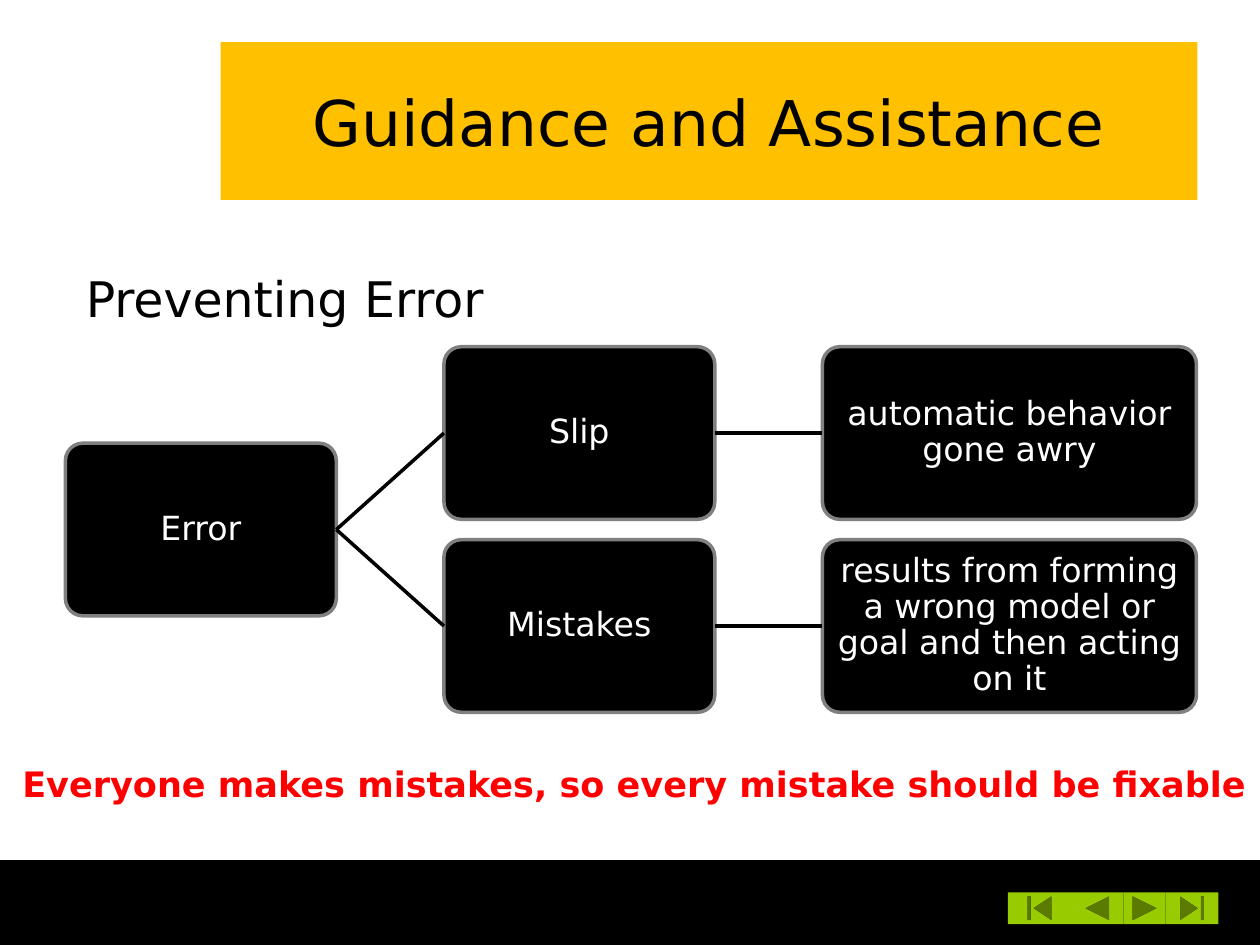
from lxml.etree import SubElement
from pptx import Presentation
from pptx.dml.color import RGBColor
from pptx.enum.shapes import MSO_CONNECTOR, MSO_SHAPE as Shape
from pptx.enum.text import MSO_ANCHOR as Anchor, PP_ALIGN as Align
from pptx.oxml.ns import qn
from pptx.util import Cm, Pt

# Content
TITLE = "Guidance and Assistance"
SUBTITLE = "Preventing Error"
MOTTO = "Everyone makes mistakes, so every mistake should be fixable"
ROOT = "Error"
BRANCHES = [
    ("Slip", "automatic behavior gone awry"),
    ("Mistakes", "results from forming a wrong model or goal and then acting on it"),
]
NAV_BUTTONS = [
    (Shape.ACTION_BUTTON_BEGINNING, 1.27),
    (Shape.ACTION_BUTTON_BACK_OR_PREVIOUS, 1.06),
    (Shape.ACTION_BUTTON_FORWARD_OR_NEXT, 0.85),
    (Shape.ACTION_BUTTON_END, 1.06),
]
FONT = "DejaVu Sans"
COLORS = {"black": "000000", "white": "FFFFFF", "gold": "FFC000",
          "grey": "808080", "green": "99CC00", "red": "FF0000"}

# Tree geometry in cm
TREE_LEFT, TREE_TOP = 1.32, 6.99
WIDTHS = [5.46, 5.46, 7.54]
BOX_HEIGHT, COLUMN_GAP, ROW_STEP = 3.48, 2.17, 3.89
COLUMNS = [TREE_LEFT + sum(WIDTHS[:i]) + i * COLUMN_GAP for i in range(3)]


def color(name):
    return RGBColor.from_string(COLORS[name])


def write(shape, text, size, ink="black", bold=False, align=Align.LEFT,
          anchor=Anchor.TOP, wrap=True, inset=None, spacing=None):
    frame = shape.text_frame
    frame.word_wrap = wrap
    frame.vertical_anchor = anchor
    if inset is not None:
        frame.margin_left = frame.margin_right = Cm(inset)
        frame.margin_top = frame.margin_bottom = Cm(inset)
    paragraph = frame.paragraphs[0]
    paragraph.alignment = align
    paragraph.line_spacing = spacing
    run = paragraph.add_run()
    run.text = text
    run.font.name, run.font.size, run.font.bold = FONT, Pt(size), bold
    run.font.color.rgb = color(ink)


def add_block(slide, kind, left, top, width, height, fill, line=None, weight=2):
    block = slide.shapes.add_shape(kind, Cm(left), Cm(top), Cm(width), Cm(height))
    block.shadow.inherit = False
    block.fill.solid()
    block.fill.fore_color.rgb = color(fill)
    if line:
        block.line.color.rgb = color(line)
        block.line.width = Pt(weight)
    else:
        block.line.fill.background()
    return block


def add_node(slide, text, column, row):
    node = add_block(slide, Shape.ROUNDED_RECTANGLE, COLUMNS[column],
                     TREE_TOP + row * ROW_STEP, WIDTHS[column], BOX_HEIGHT,
                     "black", "grey")
    node.adjustments[0] = 0.1
    write(node, text, 19, "white", align=Align.CENTER, anchor=Anchor.MIDDLE,
          inset=0.13, spacing=0.9)
    return node


def join(slide, start, end):
    link = slide.shapes.add_connector(MSO_CONNECTOR.STRAIGHT, 0, 0, 0, 0)
    link.begin_connect(start, 3)
    link.end_connect(end, 1)
    link.line.color.rgb = color("black")
    link.line.width = Pt(2)
    SubElement(link._element.spPr, qn("a:effectLst"))


def add_label(slide, text, left, top, width, height, size, **style):
    label = slide.shapes.add_textbox(Cm(left), Cm(top), Cm(width), Cm(height))
    write(label, text, size, wrap=False, **style)


def main():
    deck = Presentation()
    deck.slide_width, deck.slide_height = Cm(25.4), Cm(19.05)
    slide = deck.slides.add_slide(deck.slide_layouts[5])

    # Footer band with navigation buttons
    add_block(slide, Shape.RECTANGLE, 0, 17.35, 25.4, 1.7, "black", "black", 0.75)
    left = 20.32
    for kind, width in NAV_BUTTONS:
        add_block(slide, kind, left, 17.99, width, 0.64, "green")
        left += width

    # Title
    title = slide.shapes.title
    title.left, title.top, title.width, title.height = map(Cm, (4.45, 0.85, 19.69, 3.18))
    title.fill.solid()
    title.fill.fore_color.rgb = color("gold")
    write(title, TITLE, 36, align=Align.CENTER, anchor=Anchor.MIDDLE)

    # Error tree, root centred on its branches
    root = add_node(slide, ROOT, 0, (len(BRANCHES) - 1) / 2)
    for row, (name, meaning) in enumerate(BRANCHES):
        branch = add_node(slide, name, 1, row)
        leaf = add_node(slide, meaning, 2, row)
        join(slide, root, branch)
        join(slide, branch, leaf)

    # Subtitle and motto
    add_label(slide, SUBTITLE, 1.48, 5.28, 8.74, 1.45, 28)
    add_label(slide, MOTTO, 0.2, 15.24, 25.3, 1.12, 20, ink="red", bold=True)

    deck.save("out.pptx")


if __name__ == "__main__":
    main()
